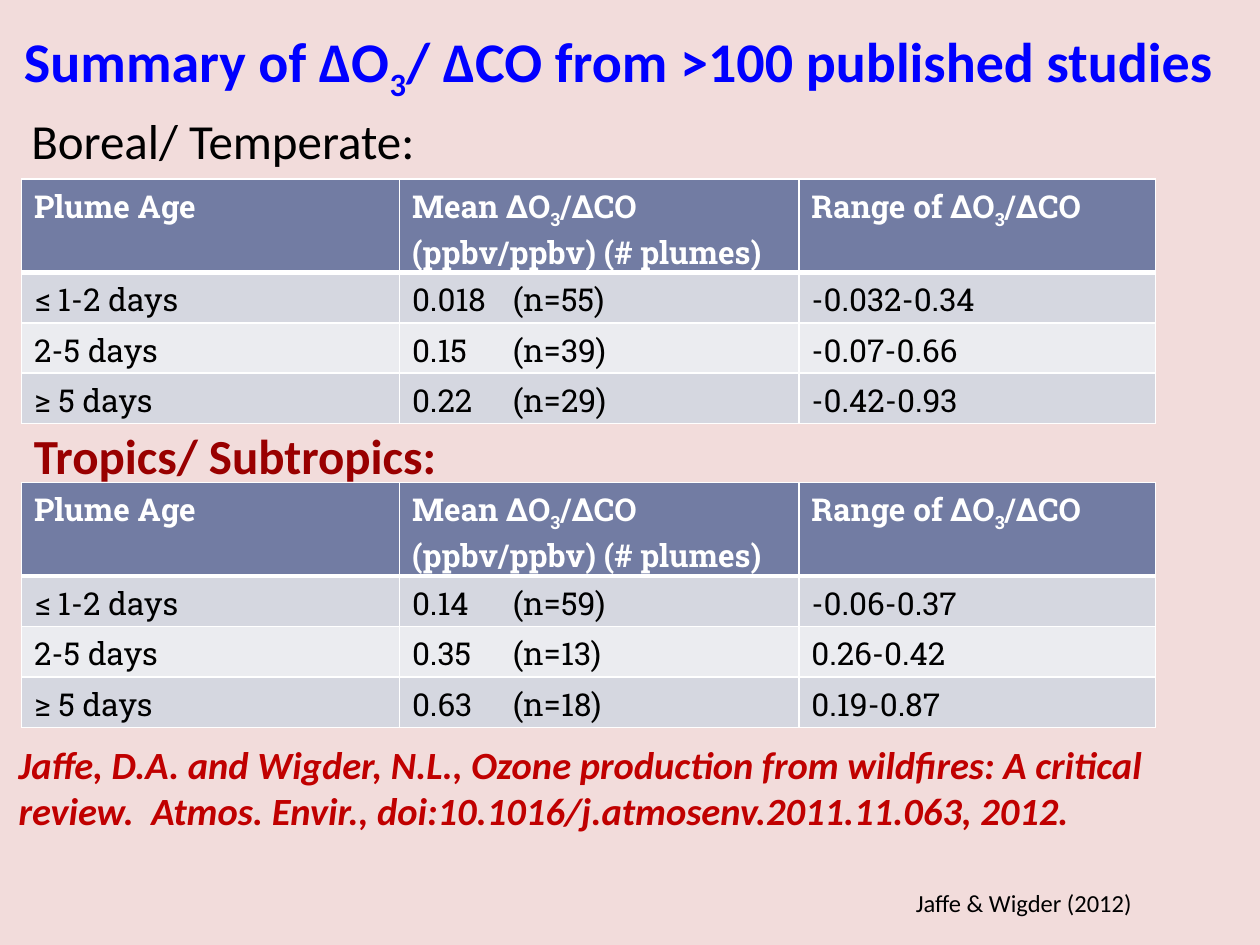
import pptx
import pptx.dml.color
import pptx.enum.text
import pptx.oxml
import pptx.oxml.ns
import pptx.util
from pptx.util import Inches

SUBSCRIPT = "-25000"
HEADINGS = [
    ["Plume Age"],
    ["Mean ∆O", "3", "/∆CO (ppbv/ppbv) (# plumes)"],
    ["Range of ∆O", "3", "/∆CO"],
]
AGES = ["≤ 1-2 days", "2-5 days", "≥ 5 days"]
BOREAL = [("0.018\t(n=55)", "-0.032-0.34"),
          ("0.15\t(n=39)", "-0.07-0.66"),
          ("0.22\t(n=29)", "-0.42-0.93")]
TROPICS = [("0.14\t(n=59)", "-0.06-0.37"),
           ("0.35\t(n=13)", "0.26-0.42"),
           ("0.63\t(n=18)", "0.19-0.87")]


def colour(value):
    """Return the colour for a hex string."""
    return pptx.dml.color.RGBColor.from_string(value)


def write(para, parts, size=18, font="Calibri", ink="000000", bold=False, italic=False):
    """Write the parts as runs, with every second part as a subscript."""
    for number, part in enumerate(parts):
        span = para.add_run()
        span.text = part
        span.font.size = pptx.util.Pt(size)
        span.font.name = font
        span.font.color.rgb = colour(ink)
        span.font.bold = bold
        span.font.italic = italic
        if number % 2:
            span.font._element.set("baseline", SUBSCRIPT)


def add_text(page, bounds, parts, align="LEFT", anchor="TOP", **style):
    """Add a wrapping text box at the given bounds."""
    box = page.shapes.add_textbox(*map(Inches, bounds))
    frame = box.text_frame
    frame.word_wrap = True
    frame.vertical_anchor = getattr(pptx.enum.text.MSO_ANCHOR, anchor)
    para = frame.paragraphs[0]
    para.alignment = getattr(pptx.enum.text.PP_ALIGN, align)
    write(para, parts, **style)


def add_borders(cell, top, bottom):
    """Give a cell white borders, with top and bottom widths in points."""
    properties = cell._tc.get_or_add_tcPr()
    widths = {"lnL": 1, "lnR": 1, "lnT": top, "lnB": bottom}
    for place, (side, width) in enumerate(widths.items()):
        line = pptx.oxml.parse_xml(
            f'<a:{side} {pptx.oxml.ns.nsdecls("a")} w="{pptx.util.Pt(width)}">'
            '<a:solidFill><a:srgbClr val="FFFFFF"/></a:solidFill>'
            f'</a:{side}>')
        properties.insert(place, line)


def add_tab_stop(para, position):
    """Set a left tab stop in a paragraph."""
    para._p.get_or_add_pPr().append(pptx.oxml.parse_xml(
        f'<a:tabLst {pptx.oxml.ns.nsdecls("a")}>'
        f'<a:tab pos="{position}" algn="l"/></a:tabLst>'))


def add_plume_table(page, bounds, results):
    """Add a table of ozone ratios by plume age."""
    rows = [HEADINGS] + [[[age], [mean], [spread]]
                         for age, (mean, spread) in zip(AGES, results)]
    table = page.shapes.add_table(len(rows), len(HEADINGS), *map(Inches, bounds)).table
    for column, width in zip(table.columns, (3, 3.17, 2.83)):
        column.width = Inches(width)
    for number, row in enumerate(rows):
        header = number == 0
        table.rows[number].height = Inches(0.74 if header else 0.4)
        fill = "727CA3" if header else ("EBECF0", "D5D7E0")[number % 2]
        for place, parts in enumerate(row):
            cell = table.cell(number, place)
            cell.fill.solid()
            cell.fill.fore_color.rgb = colour(fill)
            add_borders(cell, 3 if number == 1 else 1, 3 if header else 1)
            para = cell.text_frame.paragraphs[0]
            if place == 1 and not header:
                add_tab_stop(para, Inches(0.8))
            write(para, parts, font="Roboto Slab",
                  ink="FFFFFF" if header else "000000", bold=header)


def add_summary(page):
    """Place the title, both tables with their headings, and the sources."""
    add_text(page, (-0.08, 0.08, 10.08, 0.87),
             ["Summary of ΔO", "3", "/ ΔCO from >100 published studies "],
             align="CENTER", anchor="MIDDLE", size=32, ink="0000FF", bold=True)
    add_text(page, (0.15, 0.83, 9, 0.62), ["Boreal/ Temperate:"], size=28)
    add_text(page, (0.17, 3.33, 9, 0.62), ["Tropics/ Subtropics:"],
             size=28, ink="990000", bold=True)
    add_text(page, (7.17, 7, 2.17, 0.34), ["Jaffe & Wigder (2012)"], size=14)
    for top, results in ((1.42, BOREAL), (3.83, TROPICS)):
        add_plume_table(page, (0.17, top, 9, 1.94), results)
    add_text(page, (0.05, 5.83, 9.6, 0.84),
             ["Jaffe, D.A. and Wigder, N.L., Ozone production from wildfires: "
              "A critical review.  Atmos. Envir., "
              "doi:10.1016/j.atmosenv.2011.11.063, 2012."],
             size=22, ink="C00000", bold=True, italic=True)


def main():
    """Build and save the deck."""
    deck = pptx.Presentation()
    deck.slide_width, deck.slide_height = Inches(10), Inches(7.5)
    page = deck.slides.add_slide(deck.slide_layouts[6])
    page.background.fill.solid()
    page.background.fill.fore_color.rgb = colour("F2DCDB")
    add_summary(page)
    deck.save("out.pptx")


if __name__ == "__main__":
    main()
